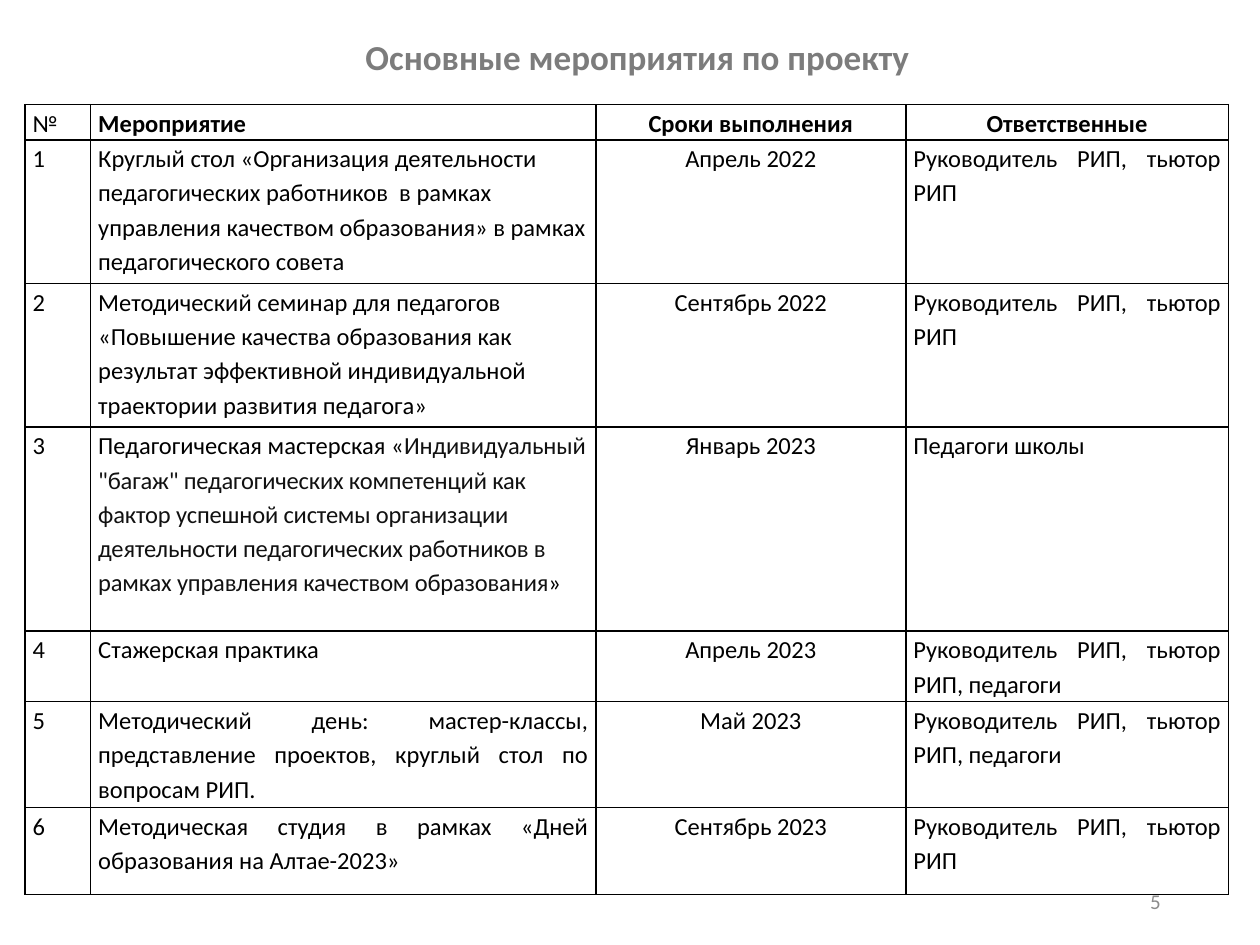
"""Build a slide with the schedule of the project's main events."""
import pptx
import pptx.util
import pptx.dml.color
import pptx.enum.text
import pptx.oxml
import pptx.oxml.ns

Inches = pptx.util.Inches
Pt = pptx.util.Pt
Align = pptx.enum.text.PP_ALIGN
Anchor = pptx.enum.text.MSO_ANCHOR

THEME = {
    "font": "Calibri", "ink": "000000", "soft ink": "111111",
    "title": "7C7C7C", "number": "8C8C8C",
    "title size": 20, "body size": 14, "number size": 12,
    "border": 1, "line spacing": 1.15, "tracking": -10,
}

TITLE = "Основные мероприятия по проекту"
PAGE_NUMBER = "5"
HEADER = ("№", "Мероприятие", "Сроки выполнения", "Ответственные")
TUTOR = "Руководитель РИП, тьютор РИП"
TUTOR_AND_TEACHERS = TUTOR + ", педагоги"
WORKSHOP = (
    "Педагогическая мастерская «",
    "Индивидуальный \"багаж\" педагогических компетенций как фактор успешной "
    "системы организации деятельности педагогических работников в рамках "
    "управления качеством образования",
    "»",
)
EVENTS = [
    ("Круглый стол «Организация деятельности педагогических работников  в рамках "
     "управления качеством образования» в рамках педагогического совета",
     "Апрель 2022", TUTOR),
    ("Методический семинар для педагогов «Повышение качества образования как "
     "результат эффективной индивидуальной траектории развития педагога»",
     "Сентябрь 2022", TUTOR),
    (WORKSHOP, "Январь 2023", "Педагоги школы"),
    ("Стажерская практика", "Апрель 2023", TUTOR_AND_TEACHERS),
    ("Методический день: мастер-классы, представление проектов, круглый стол по "
     "вопросам РИП.", "Май 2023", TUTOR_AND_TEACHERS),
    ("Методическая студия в рамках «Дней образования на Алтае-2023»",
     "Сентябрь 2023", TUTOR),
]
JUSTIFIED_EVENTS = (5, 6)

SLIDE_SIZE = (10, 7.5)
TABLE_CORNER = (0.2, 0.83)
COLUMNS = (0.52, 4.01, 2.46, 2.56)
ROWS = (0.28, 1.14, 1.14, 1.62, 0.56, 0.84, 0.69)
CELL_MARGIN = 0.06
TITLE_BOX = (2.56, 0.23, 5, 0.44)
NUMBER_BOX = (7.06, 6.95, 2.25, 0.4)


def style(span, size, color, bold=False):
    span.font.name = THEME["font"]
    span.font.size = Pt(size)
    span.font.bold = bold
    span.font.color.rgb = pptx.dml.color.RGBColor.from_string(color)


def add_label(page, place, text, size, color, align, anchor, bold=False):
    box = page.shapes.add_textbox(*map(Inches, place))
    box.text_frame.word_wrap = True
    box.text_frame.vertical_anchor = anchor
    box.text_frame.text = text
    para = box.text_frame.paragraphs[0]
    para.alignment = align
    style(para.runs[0], size, color, bold)


def draw_borders(cell):
    properties = cell._tc.get_or_add_tcPr()
    for index, side in enumerate(("lnL", "lnR", "lnT", "lnB")):
        properties.insert(index, pptx.oxml.parse_xml(
            f'<a:{side} {pptx.oxml.ns.nsdecls("a")} w="{Pt(THEME["border"])}">'
            f'<a:solidFill><a:srgbClr val="{THEME["ink"]}"/></a:solidFill></a:{side}>'))


def alignment(row, column):
    if column == 2 or (row == 0 and column == 3):
        return Align.CENTER
    if column == 3 or (column == 1 and row in JUSTIFIED_EVENTS):
        return Align.JUSTIFY
    return Align.LEFT


def fill_cell(cell, content, row, column):
    cell.fill.background()
    draw_borders(cell)
    cell.margin_left = cell.margin_right = Inches(CELL_MARGIN)
    cell.margin_top = cell.margin_bottom = 0
    para = cell.text_frame.paragraphs[0]
    para.alignment = alignment(row, column)
    para.line_spacing = THEME["line spacing"]
    parts = (content,) if isinstance(content, str) else content
    for index, part in enumerate(parts):
        span = para.add_run()
        span.text = part
        quoted = index == 1
        style(span, THEME["body size"], THEME["soft ink" if quoted else "ink"],
              row == 0 and column > 0)
        if quoted:
            span.font._element.set("spc", str(THEME["tracking"]))


def add_schedule(page):
    records = [HEADER] + [(str(number), *event) for number, event in enumerate(EVENTS, 1)]
    size = (sum(COLUMNS), sum(ROWS))
    frame = page.shapes.add_table(len(ROWS), len(COLUMNS),
                                  *map(Inches, TABLE_CORNER + size))
    table = frame.table
    table.first_row = table.horz_banding = False
    for column, width in zip(table.columns, COLUMNS):
        column.width = Inches(width)
    for row, (height, record) in enumerate(zip(ROWS, records)):
        table.rows[row].height = Inches(height)
        for column, content in enumerate(record):
            fill_cell(table.cell(row, column), content, row, column)


def main():
    deck = pptx.Presentation()
    deck.slide_width, deck.slide_height = map(Inches, SLIDE_SIZE)
    page = deck.slides.add_slide(deck.slide_layouts[6])
    add_schedule(page)
    add_label(page, NUMBER_BOX, PAGE_NUMBER, THEME["number size"], THEME["number"],
              Align.RIGHT, Anchor.MIDDLE)
    add_label(page, TITLE_BOX, TITLE, THEME["title size"], THEME["title"],
              Align.CENTER, Anchor.TOP, bold=True)
    deck.save("out.pptx")


if __name__ == "__main__":
    main()
